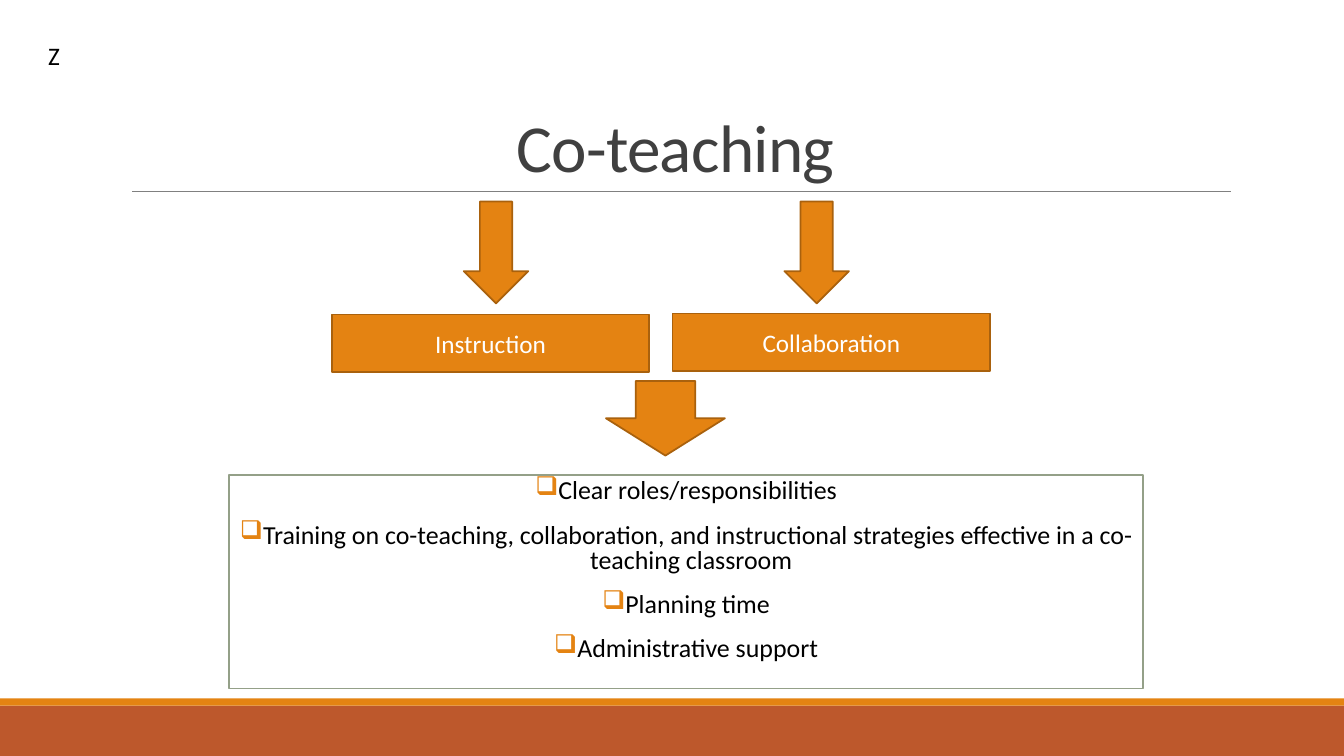
"""Builds the Co-teaching slide."""
from lxml import etree
from pptx import Presentation
from pptx.dml.color import RGBColor
from pptx.enum.shapes import MSO_CONNECTOR, MSO_SHAPE
from pptx.enum.text import MSO_ANCHOR, MSO_AUTO_SIZE, PP_ALIGN
from pptx.oxml.ns import qn
from pptx.util import Inches, Pt

RECT, ARROW = MSO_SHAPE.RECTANGLE, MSO_SHAPE.DOWN_ARROW
LINE = MSO_CONNECTOR.STRAIGHT
TOP, MIDDLE, BOTTOM = MSO_ANCHOR.TOP, MSO_ANCHOR.MIDDLE, MSO_ANCHOR.BOTTOM
LEFT, CENTER = PP_ALIGN.LEFT, PP_ALIGN.CENTER
GROW = MSO_AUTO_SIZE.SHAPE_TO_FIT_TEXT

ORANGE, RUST, EDGE = "E48312", "BD582C", "A9610D"
WHITE, BLACK, GRAY, SAGE, DARK = "FFFFFF", "000000", "808080", "94A088", "404040"

WIDE, HIGH = 13.33, 7.5
BANDS = [(7, 0.5, RUST), (6.93, 0.07, ORANGE)]
TITLE = "Co-teaching"
MARK = "Z"
ARROWS = [(4.6, 2, 0.64, 1.01), (7.78, 2, 0.64, 1.01), (6.01, 3.78, 1.18, 0.74)]
PARTS = [("Instruction", 3.29, 3.12), ("Collaboration", 6.67, 3.11)]
NEEDS = [
    "Clear roles/responsibilities",
    "Training on co-teaching, collaboration, and instructional strategies "
    "effective in a co-teaching classroom",
    "Planning time",
    "Administrative support",
]

deck = Presentation()
deck.slide_width, deck.slide_height = Inches(WIDE), Inches(HIGH)
slide = deck.slides.add_slide(deck.slide_layouts[6])


def color(code):
    return RGBColor.from_string(code)


def shape(kind, box, fill, edge=None):
    item = slide.shapes.add_shape(kind, *map(Inches, box))
    item.shadow.inherit = False
    item.fill.solid()
    item.fill.fore_color.rgb = color(fill)
    if edge:
        item.line.color.rgb = color(edge)
        item.line.width = Pt(1.25)
    else:
        item.line.fill.background()
    return item


def bullet(para):
    props = para._p.get_or_add_pPr()
    props.set("marL", str(Inches(0.1)))
    props.set("indent", str(Inches(-0.1)))
    tint = etree.SubElement(props, qn("a:buClr"))
    etree.SubElement(tint, qn("a:srgbClr"), val=ORANGE)
    etree.SubElement(props, qn("a:buChar"), char="❑")


def write(item, *lines, size=18, ink=BLACK, align=CENTER, anchor=TOP, side=0.1,
          space=None, before=0, after=0, track=0, marks=False):
    frame = item.text_frame
    frame.word_wrap = True
    frame.vertical_anchor = anchor
    frame.margin_left = frame.margin_right = Inches(side)
    for i, line in enumerate(lines):
        para = frame.add_paragraph() if i else frame.paragraphs[0]
        para.alignment = align
        para.line_spacing = space
        para.space_before, para.space_after = Pt(before), Pt(after)
        if marks:
            bullet(para)
        run = para.add_run()
        run.text = line
        run.font.name, run.font.size = "Calibri", Pt(size)
        run.font.color.rgb = color(ink)
        if track:
            run._r.get_or_add_rPr().set("spc", str(int(track * 100)))
    return frame


def label(box):
    return slide.shapes.add_textbox(*map(Inches, box))


for top, tall, fill in BANDS:
    shape(RECT, (0, top, WIDE, tall), fill)

rule = slide.shapes.add_connector(LINE, *map(Inches, (1.31, 1.9, 12.21, 1.9)))
rule.line.color.rgb = color(GRAY)
rule.line.width = Pt(0.5)
etree.SubElement(rule._element.spPr, qn("a:effectLst"))

write(label((1.2, 0.31, 11, 1.59)), TITLE, size=48, ink=DARK, anchor=BOTTOM,
      space=0.85, track=-0.5)

write(shape(RECT, (2.27, 4.71, 9.07, 2.12), WHITE, SAGE), *NEEDS, size=18.5,
      side=0, space=0.8, before=12, after=2, marks=True)

for box in ARROWS:
    shape(ARROW, box, ORANGE, EDGE)

for name, left, top in PARTS:
    write(shape(RECT, (left, top, 3.15, 0.57), ORANGE, EDGE), name, ink=WHITE,
          anchor=MIDDLE)

write(label((0.38, 0.35, 0.34, 0.41)), MARK, align=LEFT).auto_size = GROW

deck.save("out.pptx")
